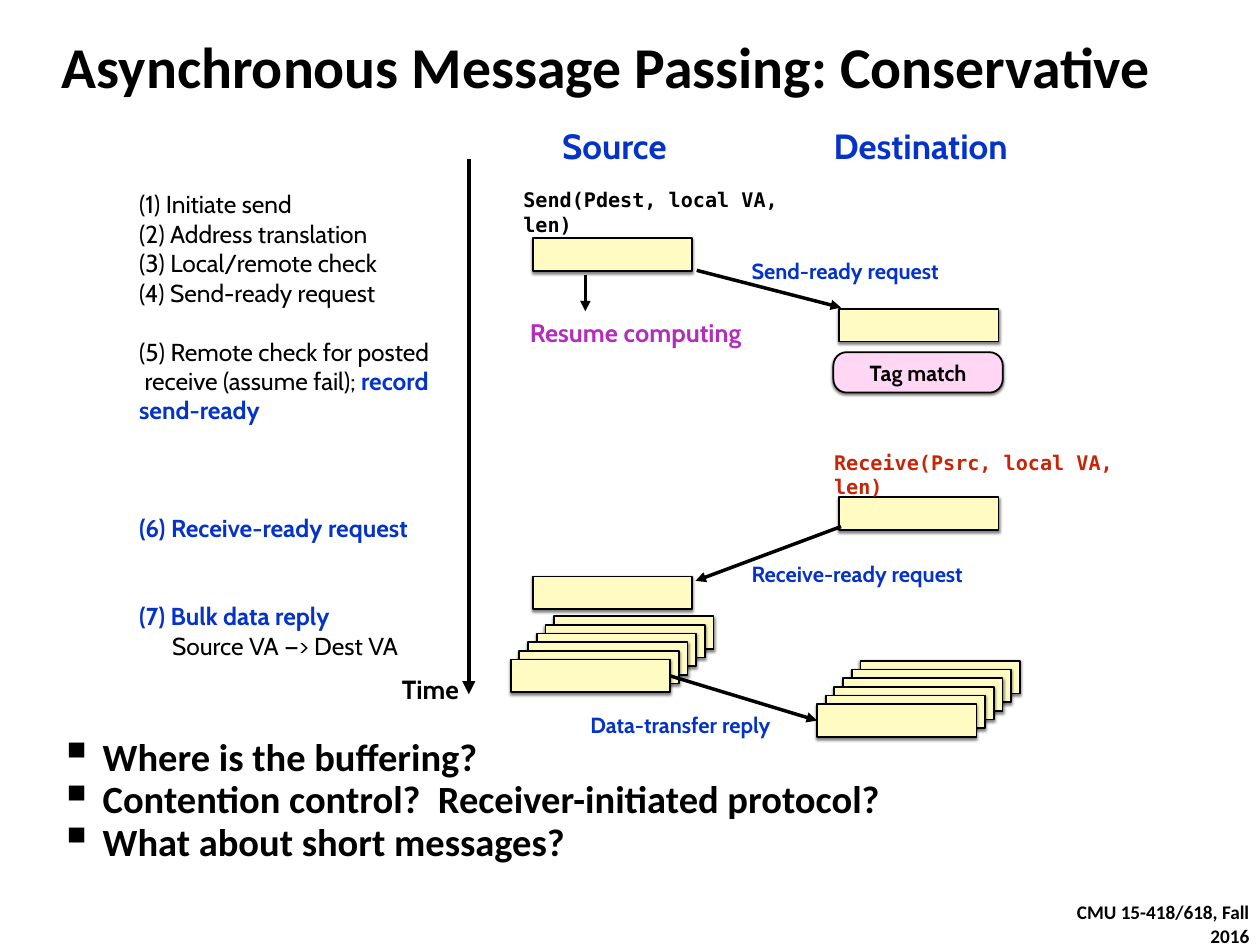
import pptx
import pptx.util
import pptx.dml.color
import pptx.enum.shapes
import pptx.enum.text
import pptx.oxml
import pptx.oxml.ns

Cm = pptx.util.Cm
Pt = pptx.util.Pt
SHAPES = pptx.enum.shapes.MSO_SHAPE
ALIGN = pptx.enum.text.PP_ALIGN
ANCHOR = pptx.enum.text.MSO_ANCHOR

COLORS = {"ink": "000000", "blue": "0533CA", "purple": "B12DBC",
          "red": "C82506", "packet": "FFFBC2", "match": "FFD6F3"}
PACKET_SIZE = (6.43, 1.32)
STACK_COUNT = 6
STACK_STEP = 0.35
STEP_LINE = 33.6

STEPS = [
    (0, 0, [("(1) Initiate send", False)]),
    (0, 0, [("(2) Address translation", False)]),
    (0, 0, [("(3) Local/remote check", False)]),
    (0, 0, [("(4) Send-ready request", False)]),
    (1, 0, [("(5) Remote check for posted\v receive (assume fail); ", False),
            ("record send-ready", True)]),
    (3, 0, [("(6) Receive-ready request", True)]),
    (2, 0, [("(7) Bulk data reply", True)]),
    (0, 1.33, [("Source VA —> Dest VA", False)]),
]
QUESTIONS = ["Where is the buffering?",
             "Contention control?  Receiver-initiated protocol?",
             "What about short messages?"]


def rgb(name):
    return pptx.dml.color.RGBColor.from_string(COLORS[name])


def xml(tag, body="", **attributes):
    listed = "".join(f' {key}="{value}"' for key, value in attributes.items())
    namespace = pptx.oxml.ns.nsdecls("a")
    return pptx.oxml.parse_xml(f"<a:{tag} {namespace}{listed}>{body}</a:{tag}>")


def write(paragraph, text, size=25, font="Cabin", color="ink", bold=True, align=ALIGN.LEFT):
    paragraph.alignment = align
    for position, line in enumerate(text.split("\v")):
        if position:
            paragraph.add_line_break()
        run = paragraph.add_run()
        run.text = line
        run.font.size = Pt(size)
        run.font.name = font
        run.font.bold = bold
        run.font.color.rgb = rgb(color)


def open_frame(slide, box, anchor=ANCHOR.MIDDLE):
    frame = slide.shapes.add_textbox(*map(Cm, box)).text_frame
    frame.word_wrap = True
    frame.vertical_anchor = anchor
    frame.margin_left = frame.margin_right = Cm(0.15)
    frame.margin_top = frame.margin_bottom = Cm(0.15)
    return frame


def label(slide, box, text, anchor=ANCHOR.MIDDLE, **style):
    write(open_frame(slide, box, anchor).paragraphs[0], text, **style)


def block(slide, box, kind=SHAPES.RECTANGLE, fill="packet"):
    panel = slide.shapes.add_shape(kind, *map(Cm, box))
    panel.fill.solid()
    panel.fill.fore_color.rgb = rgb(fill)
    panel.line.color.rgb = rgb("ink")
    panel.line.width = Pt(2)
    panel.shadow.inherit = False
    effects = panel._element.spPr.find(pptx.oxml.ns.qn("a:effectLst"))
    effects.append(xml("outerShdw", '<a:srgbClr val="000000"><a:alpha val="50000"/></a:srgbClr>',
                       blurRad=Pt(3), dist=Pt(2), dir=5400000, rotWithShape=0))
    return panel


def arrow(slide, start, end, width=4):
    link = slide.shapes.add_connector(pptx.enum.shapes.MSO_CONNECTOR.STRAIGHT,
                                      *map(Cm, (*start, *end)))
    link.line.color.rgb = rgb("ink")
    link.line.width = Pt(width)
    link.line._get_or_add_ln().append(xml("tailEnd", type="triangle"))
    link._element.spPr.append(xml("effectLst"))
    return link


def draw_steps(slide, box):
    frame = open_frame(slide, box, ANCHOR.TOP)
    for number, (skipped, indent, pieces) in enumerate(STEPS):
        step = frame.add_paragraph() if number else frame.paragraphs[0]
        step.space_before = Pt(skipped * STEP_LINE)
        if indent:
            step._p.get_or_add_pPr().set("marL", str(Cm(indent)))
        for text, stressed in pieces:
            write(step, text, size=28, bold=stressed, color="blue" if stressed else "ink")


def draw_timeline(slide, box):
    left, top, width, height = box
    axis = left + width
    arrow(slide, (axis, top), (axis, top + height), width=5)
    label(slide, (left, top + height - 0.89, width - 0.25, 1.37), "Time",
          size=30, align=ALIGN.RIGHT)


def draw_column(slide, box, heading, call, call_offset, call_color, packet_tops, stack_top):
    left, top, width, _ = box
    label(slide, (left, top, width, 1.7), heading, size=40, color="blue", align=ALIGN.CENTER)
    for packet_top in packet_tops:
        block(slide, (left + 0.91, top + packet_top, *PACKET_SIZE))
    for depth in range(STACK_COUNT):
        shift = depth * STACK_STEP
        front = block(slide, (left + 1.77 - shift, top + stack_top + shift, *PACKET_SIZE))
    call_x, call_y, call_width = call_offset
    label(slide, (left + call_x, top + call_y, call_width, 1.09), call,
          size=23, font="DejaVu Sans Mono", color=call_color)
    return front


def draw_tag_match(slide, box):
    match = block(slide, box, SHAPES.ROUNDED_RECTANGLE, "match")
    match.adjustments[0] = 0.33
    match.text_frame.vertical_anchor = ANCHOR.MIDDLE
    write(match.text_frame.paragraphs[0], "Tag match", align=ALIGN.CENTER)


def draw_messages(slide, box, source_data, destination_data):
    left, top, _, _ = box
    for start, end in [((7.52, 5.9), (13.34, 7.4)),
                       ((3.03, 6.1), (3.03, 7.55)),
                       ((13.34, 16.23), (7.47, 18.42))]:
        arrow(slide, (left + start[0], top + start[1]), (left + end[0], top + end[1]))
    reply = arrow(slide, (left, top), (left, top))
    reply.begin_connect(source_data, 3)
    reply.end_connect(destination_data, 1)
    for x, y, text in [(9.58, 5.19, "Send-ready request"),
                       (9.58, 17.4, "Receive-ready request"),
                       (3.08, 23.47, "Data-transfer reply")]:
        label(slide, (left + x, top + y, 9.27, 1.47), text, color="blue")
    label(slide, (left + 0.64, top + 7.73, 9.4, 1.32), "Resume computing",
          size=29, color="purple")


def draw_questions(slide, box):
    frame = open_frame(slide, box, ANCHOR.TOP)
    for number, text in enumerate(QUESTIONS):
        question = frame.add_paragraph() if number else frame.paragraphs[0]
        question.line_spacing = 0.8
        question.space_before = Pt(6)
        write(question, text, size=44, font="Calibri")
        properties = question._p.get_or_add_pPr()
        properties.set("marL", str(Cm(1.75)))
        properties.set("indent", str(Cm(-1.75)))
        properties.append(xml("buSzPct", val=120000))
        properties.append(xml("buChar", char="▪"))


def main():
    deck = pptx.Presentation()
    deck.slide_width, deck.slide_height = Cm(50.8), Cm(38.1)
    slide = deck.slides.add_slide(deck.slide_layouts[6])

    label(slide, (41.94, 36.7, 8.58, 1.09), "CMU 15-418/618, Fall 2016",
          size=22, font="Calibri", align=ALIGN.RIGHT)
    label(slide, (2.34, 1.09, 47.29, 3.1), "Asynchronous Message Passing: Conservative",
          anchor=ANCHOR.TOP, size=66, font="Calibri")
    draw_questions(slide, (2.24, 29.77, 44.88, 6.86))
    draw_steps(slide, (5.46, 7.49, 12.27, 20.47))
    draw_timeline(slide, (15.3, 6.4, 3.6, 21.59))
    source_data = draw_column(
        slide, (20.57, 5, 8.4, 23), "Source", "Send(Pdest, local VA, len)",
        (0.38, 3, 11.91), "ink", (4.6, 18.24), 19.84)
    destination_data = draw_column(
        slide, (32.92, 5, 8.4, 25), "Destination", "Receive(Psrc, local VA, len)",
        (0.56, 13.57, 12.8), "red", (7.45, 15.04), 21.64)
    draw_tag_match(slide, (33.6, 14.2, 6.83, 1.63))
    draw_messages(slide, (20.57, 5, 20.75, 25), source_data, destination_data)
    deck.save("out.pptx")


if __name__ == "__main__":
    main()
